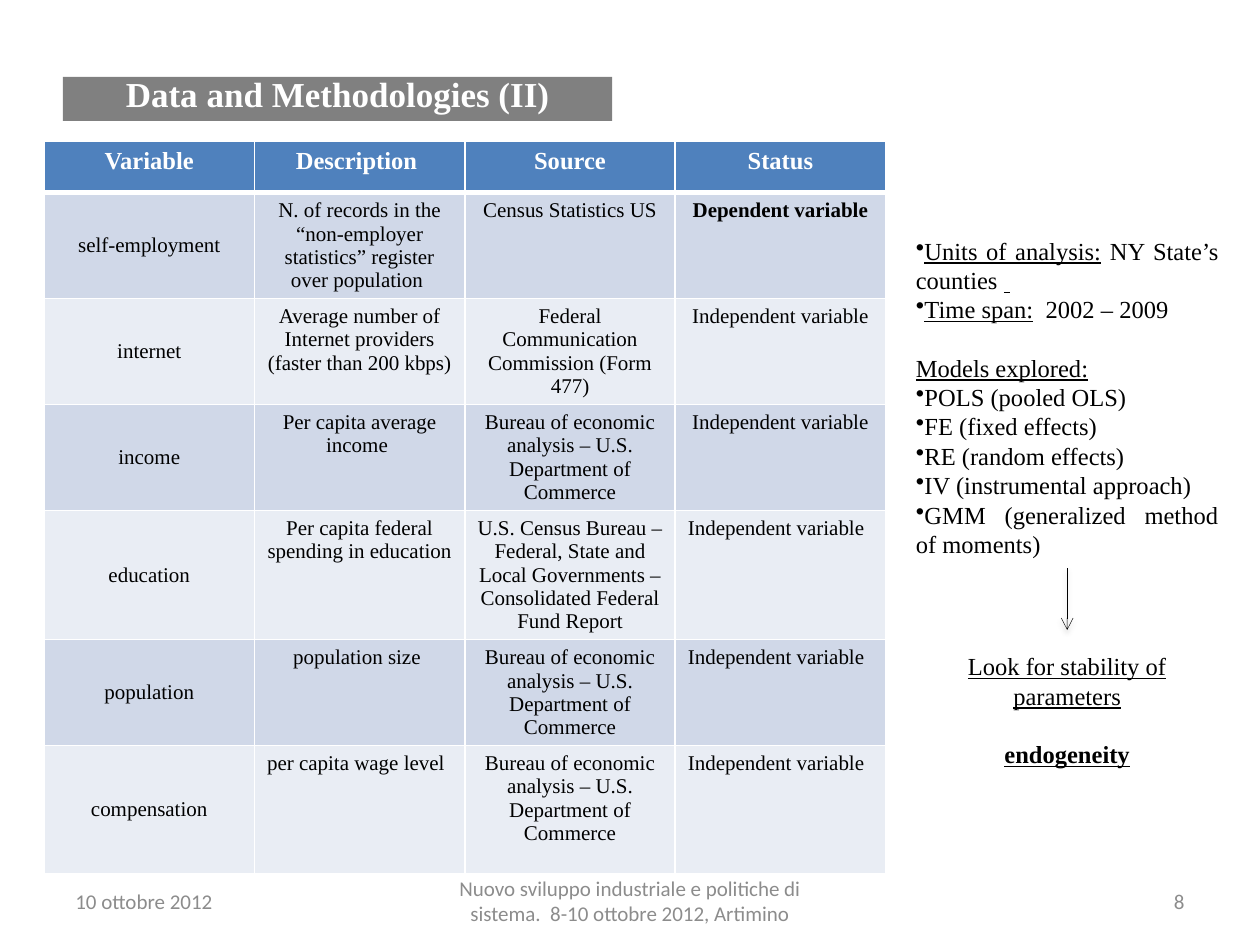
from dataclasses import dataclass

from lxml import etree
from pptx import Presentation
from pptx.dml.color import RGBColor
from pptx.enum.shapes import MSO_CONNECTOR, MSO_SHAPE
from pptx.enum.text import MSO_ANCHOR, MSO_AUTO_SIZE, PP_ALIGN
from pptx.oxml import parse_xml
from pptx.oxml.ns import nsdecls, qn
from pptx.util import Inches, Pt

LEFT, CENTER, RIGHT, JUSTIFY = PP_ALIGN.LEFT, PP_ALIGN.CENTER, PP_ALIGN.RIGHT, PP_ALIGN.JUSTIFY
TOP, MIDDLE, BOTTOM = MSO_ANCHOR.TOP, MSO_ANCHOR.MIDDLE, MSO_ANCHOR.BOTTOM
STRAIGHT, RECTANGLE = MSO_CONNECTOR.STRAIGHT, MSO_SHAPE.RECTANGLE
BOTTOM_SIDE = 2


@dataclass(frozen=True)
class Theme:
    serif: str = "Times New Roman"
    sans: str = "Calibri"
    black: str = "000000"
    white: str = "FFFFFF"
    footer: str = "8C8C8C"
    banner: str = "808080"
    header: str = "4F81BD"
    bands: tuple = ("D0D8E8", "E9EDF4")
    title_size: int = 20
    body_size: int = 14
    small_size: int = 12
    blank_line: float = 16.5


THEME = Theme()
WIDTH, HEIGHT = 10, 7.5
MARGIN = 0.5
FOOTER_TOP, FOOTER_HEIGHT = 6.95, 0.4
SIDE_LEFT, SIDE_WIDTH = 7.17, 2.6
TABLE_LEFT, TABLE_TOP, COLUMN_WIDTH = 0.35, 1.12, 1.67
ROW_HEIGHTS = (0.41, 0.84, 0.84, 0.84, 1.02, 0.84, 1.02)

COMMERCE = "Bureau of economic analysis – U.S. Department of Commerce"
INDEPENDENT = "Independent variable"
VARIABLES = [
    ("Variable", "Description ", "Source", "Status"),
    ("self-employment", "N. of records in the “non-employer statistics” register over population ",
     "Census Statistics US", "Dependent variable"),
    ("internet", "Average number of Internet providers (faster than 200 kbps)",
     "Federal Communication Commission (Form 477)", INDEPENDENT),
    ("income", "Per capita average income ", COMMERCE, INDEPENDENT),
    ("education", "Per capita federal spending in education",
     "U.S. Census Bureau – Federal, State and Local Governments – Consolidated Federal Fund Report",
     INDEPENDENT),
    ("population", "population size ", COMMERCE, INDEPENDENT),
    ("compensation", "per capita wage level", COMMERCE, INDEPENDENT),
]
LEFT_ALIGNED_CELLS = {(4, 3), (5, 3), (6, 1), (6, 3)}
MODELS = ("POLS (pooled OLS)", "FE (fixed effects)", "RE (random effects)",
          "IV (instrumental approach)", "GMM (generalized method of moments) ")


def color(value):
    return RGBColor.from_string(value)


def write(frame, *runs, size=THEME.body_size, font=THEME.serif, ink=THEME.black, bold=False,
          align=LEFT, bullet=False, space_before=0):
    """Append a paragraph; each run is a text or a (text, underlined) pair."""
    first = frame.paragraphs[0]
    paragraph = frame.add_paragraph() if first.runs else first
    paragraph.alignment = align
    paragraph.space_before = Pt(space_before)
    if bullet:
        etree.SubElement(paragraph._p.get_or_add_pPr(), qn("a:buChar"), char="•")
    for item in runs:
        text, underlined = (item, False) if isinstance(item, str) else item
        run = paragraph.add_run()
        run.text = text
        run.font.name, run.font.size, run.font.bold = font, Pt(size), bold
        run.font.underline = underlined
        run.font.color.rgb = color(ink)


def add_text_box(slide, left, top, width, height, anchor=TOP, grow=False):
    box = slide.shapes.add_textbox(Inches(left), Inches(top), Inches(width), Inches(height))
    frame = box.text_frame
    frame.word_wrap = True
    frame.vertical_anchor = anchor
    frame.auto_size = MSO_AUTO_SIZE.SHAPE_TO_FIT_TEXT if grow else MSO_AUTO_SIZE.NONE
    return box


def add_footer(slide):
    side_width, center_width = 2.33, 3.17
    for text, left, width, align in (
        ("10 ottobre 2012", MARGIN, side_width, LEFT),
        ("Nuovo sviluppo industriale e politiche di sistema.  8-10 ottobre 2012, Artimino",
         (WIDTH - center_width) / 2, center_width, CENTER),
        ("8", WIDTH - MARGIN - side_width, side_width, RIGHT),
    ):
        box = add_text_box(slide, left, FOOTER_TOP, width, FOOTER_HEIGHT, anchor=MIDDLE)
        write(box.text_frame, text, size=THEME.small_size, font=THEME.sans,
              ink=THEME.footer, align=align)


def add_title(slide):
    banner = slide.shapes.add_shape(RECTANGLE, Inches(MARGIN), Inches(0.61), Inches(4.36), Inches(0.35))
    banner.shadow.inherit = False
    banner.fill.solid()
    banner.fill.fore_color.rgb = color(THEME.banner)
    banner.line.fill.background()
    banner.text_frame.word_wrap = True
    banner.text_frame.vertical_anchor = BOTTOM
    write(banner.text_frame, "Data and Methodologies (II)", size=THEME.title_size,
          ink=THEME.white, bold=True, align=CENTER)


def set_borders(cell, bottom_width):
    properties = cell._tc.get_or_add_tcPr()
    for index, side in enumerate(("lnL", "lnR", "lnT", "lnB")):
        width = Pt(bottom_width if side == "lnB" else 1)
        properties.insert(index, parse_xml(
            f'<a:{side} {nsdecls("a")} w="{width}"><a:solidFill>'
            f'<a:srgbClr val="{THEME.white}"/></a:solidFill></a:{side}>'))


def fill_cell(cell, text, row, column):
    header = row == 0
    cell.fill.solid()
    cell.fill.fore_color.rgb = color(THEME.header if header else THEME.bands[(row - 1) % 2])
    cell.vertical_anchor = MIDDLE if column == 0 and not header else TOP
    set_borders(cell, bottom_width=3 if header else 1)
    write(cell.text_frame, text,
          size=THEME.body_size if header else THEME.small_size,
          ink=THEME.white if header else THEME.black,
          bold=header or text == "Dependent variable",
          align=LEFT if (row, column) in LEFT_ALIGNED_CELLS else CENTER)


def add_variable_table(slide):
    columns = len(VARIABLES[0])
    table = slide.shapes.add_table(
        len(VARIABLES), columns, Inches(TABLE_LEFT), Inches(TABLE_TOP),
        Inches(COLUMN_WIDTH * columns), Inches(sum(ROW_HEIGHTS))).table
    for column in table.columns:
        column.width = Inches(COLUMN_WIDTH)
    for row, (texts, height) in enumerate(zip(VARIABLES, ROW_HEIGHTS)):
        table.rows[row].height = Inches(height)
        for column, text in enumerate(texts):
            fill_cell(table.cell(row, column), text, row, column)


def add_analysis(slide):
    box = add_text_box(slide, SIDE_LEFT, 1.82, SIDE_WIDTH, 2.69, grow=True)
    frame = box.text_frame
    write(frame, ("Units of analysis:", True), " NY State’s counties ", (" ", True),
          align=JUSTIFY, bullet=True)
    write(frame, ("Time span:", True), "  2002 – 2009 ", align=JUSTIFY, bullet=True)
    write(frame, ("Models explored:", True), align=JUSTIFY, space_before=THEME.blank_line)
    for model in MODELS:
        write(frame, model, align=JUSTIFY, bullet=True)
    return box


def add_down_arrow(slide, source, end_y):
    x = source.left + source.width // 2
    arrow = slide.shapes.add_connector(STRAIGHT, x, source.top + source.height, x, Inches(end_y))
    arrow.begin_connect(source, BOTTOM_SIDE)
    arrow.line.color.rgb = color(THEME.black)
    arrow.line.width = Pt(0.25)
    etree.SubElement(arrow.line._get_or_add_ln(), qn("a:tailEnd"), type="arrow")
    arrow._element.spPr.append(parse_xml(
        f'<a:effectLst {nsdecls("a")}><a:outerShdw blurRad="{Pt(3.1)}" dist="{Pt(1.6)}" '
        f'dir="5400000" rotWithShape="0"><a:srgbClr val="{THEME.black}">'
        '<a:alpha val="38000"/></a:srgbClr></a:outerShdw></a:effectLst>'))


def add_conclusion(slide):
    frame = add_text_box(slide, SIDE_LEFT, 5.12, SIDE_WIDTH, 1.04, grow=True).text_frame
    write(frame, ("Look for stability of parameters", True), align=CENTER)
    write(frame, ("endogeneity", True), bold=True, align=CENTER, space_before=THEME.blank_line)


def main():
    presentation = Presentation()
    presentation.slide_width, presentation.slide_height = Inches(WIDTH), Inches(HEIGHT)
    slide = presentation.slides.add_slide(presentation.slide_layouts[6])
    add_footer(slide)
    add_title(slide)
    add_variable_table(slide)
    analysis = add_analysis(slide)
    add_down_arrow(slide, analysis, end_y=5)
    add_conclusion(slide)
    presentation.save("out.pptx")


if __name__ == "__main__":
    main()
